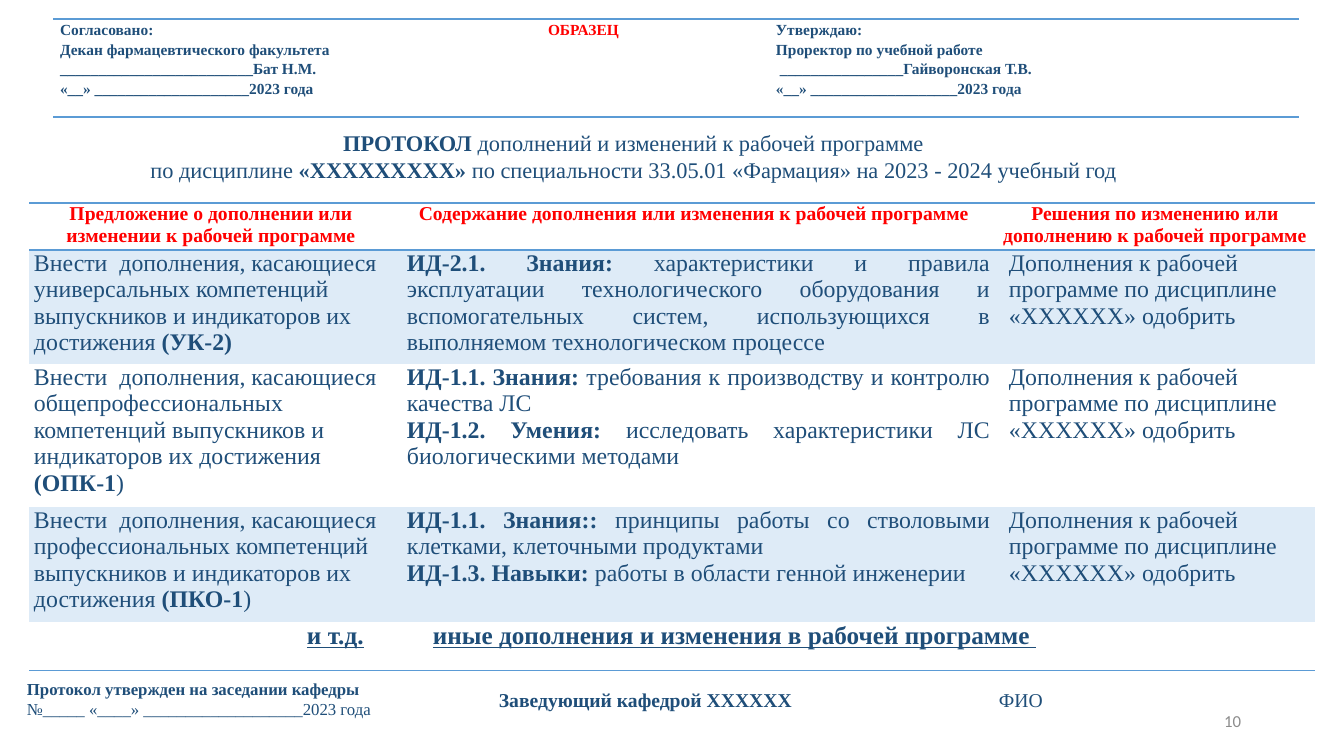
from lxml import etree
from pptx import Presentation
from pptx.dml.color import RGBColor
from pptx.enum.text import MSO_ANCHOR, PP_ALIGN
from pptx.oxml.ns import qn
from pptx.util import Pt

LEFT, CENTER, RIGHT, JUSTIFY = PP_ALIGN.LEFT, PP_ALIGN.CENTER, PP_ALIGN.RIGHT, PP_ALIGN.JUSTIFY
TOP, MIDDLE = MSO_ANCHOR.TOP, MSO_ANCHOR.MIDDLE
COLORS = {"navy": "1F4E79", "red": "FF0000", "line": "5B9BD5", "band": "DEEBF7", "gray": "8C8C8C"}
SERIF = "Times New Roman"
PLAIN_STYLE = "{2D5ABB26-0587-4C30-8999-92F81FD0307C}"
SCALE = 12192000 / 1344

AGREED = ["*Согласовано:\t**ОБРАЗЕЦ*", "*Декан фармацевтического факультета*",
          "*_________________________Бат Н.М.*", "*«__» ____________________2023 года*"]
APPROVED = ["*Утверждаю:*", "*Проректор по учебной работе*",
            "* ________________Гайворонская Т.В.*", "*«__» ___________________2023 года*"]
TITLE = ["*ПРОТОКОЛ* дополнений и изменений к рабочей программе",
         "по дисциплине *«ХХХХХХХХХ»* по специальности 33.05.01 «Фармация» на 2023 - 2024 учебный год"]
HEADINGS = ["*Предложение о дополнении или изменении к рабочей программе*",
            "*Содержание дополнения или изменения к рабочей программе*",
            "*Решения по изменению или дополнению к рабочей программе*"]
PROPOSAL = "Внести  дополнения, касающиеся {} компетенций выпускников и индикаторов их достижения {}"
DECISION = "Дополнения к рабочей программе по дисциплине «ХХХХХХ» одобрить"
CHANGES = [
    ("универсальных", "*(УК-2)*",
     ["*ИД-2.1. Знания:* характеристики и правила эксплуатации технологического оборудования "
      "и вспомогательных систем, использующихся в выполняемом технологическом процессе"]),
    ("общепрофессиональных", "*(ОПК-1*)",
     ["*ИД-1.1. Знания:* требования к производству и контролю качества ЛС",
      "*ИД-1.2. Умения:* исследовать характеристики ЛС биологическими методами"]),
    ("профессиональных", "*(ПКО-1*)",
     ["*ИД-1.1. Знания::* принципы работы со стволовыми клетками, клеточными продуктами",
      "*ИД-1.3. Навыки:* работы в области генной инженерии"]),
]
OTHER = "\t*и т.д.\tиные дополнения и изменения в рабочей программе *"


def px(length):
    return round(length * SCALE)


def write(frame, lines, size, color="navy", font=SERIF, align=LEFT, spacing=1.0, indent=0, tabs=()):
    """Fill a text frame with one paragraph per line; asterisks enclose bold spans."""
    for number, line in enumerate(lines):
        para = frame.add_paragraph() if number else frame.paragraphs[0]
        para.alignment, para.line_spacing = align, spacing
        properties = para._p.get_or_add_pPr()
        if indent:
            properties.set("marL", str(px(indent)))
            properties.set("indent", "0")
        if tabs:
            stops = etree.SubElement(properties, qn("a:tabLst"))
            for stop in tabs:
                etree.SubElement(stops, qn("a:tab"), pos=str(px(stop)), algn="l")
        for order, text in enumerate(line.split("*")):
            if text:
                span = para.add_run()
                span.text = text
                span.font.name, span.font.size = font, Pt(size)
                span.font.bold = order % 2 == 1
                span.font.color.rgb = RGBColor.from_string(COLORS[color])


def add_text(page, left, top, width, height, lines, size, anchor=TOP, **style):
    box = page.shapes.add_textbox(px(left), px(top), px(width), px(height))
    box.text_frame.word_wrap = True
    box.text_frame.vertical_anchor = anchor
    write(box.text_frame, lines, size, **style)


def add_title(page, left, top, width, height, lines, size):
    title = page.shapes.title
    title.left, title.top, title.width, title.height = map(px, (left, top, width, height))
    title.text_frame.vertical_anchor = TOP
    write(title.text_frame, lines, size, align=CENTER)


def add_grid(page, left, top, widths, heights, margin):
    """Add an unstyled table with the given column widths and row heights."""
    frame = page.shapes.add_table(len(heights), len(widths), px(left), px(top),
                                  px(sum(widths)), px(sum(heights)))
    table = frame.table
    table.first_row = table.horz_banding = False
    table._tbl.tblPr.find(qn("a:tableStyleId")).text = PLAIN_STYLE
    for column, width in zip(table.columns, widths):
        column.width = px(width)
    for row, height in zip(table.rows, heights):
        row.height = px(height)
    for cell in table.iter_cells():
        cell.margin_left = cell.margin_right = px(margin)
        cell.margin_top = cell.margin_bottom = 0
        cell.fill.background()
    return table


def rule_row(table, row, sides):
    """Draw horizontal borders along the named sides of a row."""
    for column in range(len(table.columns)):
        properties = table.cell(row, column)._tc.get_or_add_tcPr()
        for order, side in enumerate(sides):
            line = etree.Element(qn("a:ln" + side), w=str(Pt(1)))
            fill = etree.SubElement(line, qn("a:solidFill"))
            etree.SubElement(fill, qn("a:srgbClr"), val=COLORS["line"])
            properties.insert(order, line)


def add_approvals(page):
    table = add_grid(page, 53, 19, [674, 42, 530], [98], 7)
    agreed = table.cell(0, 0).text_frame
    write(agreed, AGREED, 11, align=JUSTIFY, spacing=1.15, tabs=[488])
    agreed.paragraphs[0].runs[-1].font.color.rgb = RGBColor.from_string(COLORS["red"])
    write(table.cell(0, 2).text_frame, APPROVED, 11, align=JUSTIFY, spacing=1.15)
    rule_row(table, 0, "TB")


def add_changes(page):
    table = add_grid(page, 29, 203, [364, 602, 320], [47, 114, 143, 115, 49], 5)
    for column, heading in enumerate(HEADINGS):
        write(table.cell(0, column).text_frame, [heading], 14, color="red", align=CENTER)
    for row, (kind, code, contents) in enumerate(CHANGES, 1):
        proposal, content, decision = table.rows[row].cells
        write(proposal.text_frame, [PROPOSAL.format(kind, code)], 17)
        write(content.text_frame, contents, 17, align=JUSTIFY, indent=9)
        write(decision.text_frame, [DECISION], 17, indent=9)
        if row % 2:
            for cell in (proposal, content, decision):
                cell.fill.solid()
                cell.fill.fore_color.rgb = RGBColor.from_string(COLORS["band"])
    last = len(CHANGES) + 1
    other = table.cell(last, 0)
    other.merge(table.cell(last, 2))
    write(other.text_frame, [OTHER], 18, tabs=[273, 399])
    other.text_frame.paragraphs[0].runs[-1].font.underline = True
    rule_row(table, 0, "TB")
    rule_row(table, last, "B")


def main():
    deck = Presentation()
    deck.slide_width, deck.slide_height = px(1344), px(756)
    page = deck.slides.add_slide(deck.slide_layouts[5])
    add_approvals(page)
    add_title(page, 94, 124, 1079, 65, TITLE, 16)
    add_changes(page)
    add_text(page, 17, 674, 401, 50, ["*Протокол утвержден на заседании кафедры*",
                                      "№_____ «____» ___________________2023 года"], 12)
    add_text(page, 489, 683, 588, 34, ["*Заведующий кафедрой ХХХХХХ*\tФИО"], 14, tabs=[500])
    add_text(page, 949, 701, 302, 40, ["10"], 12, anchor=MIDDLE, color="gray",
             font="Calibri", align=RIGHT)
    deck.save("out.pptx")


if __name__ == "__main__":
    main()
